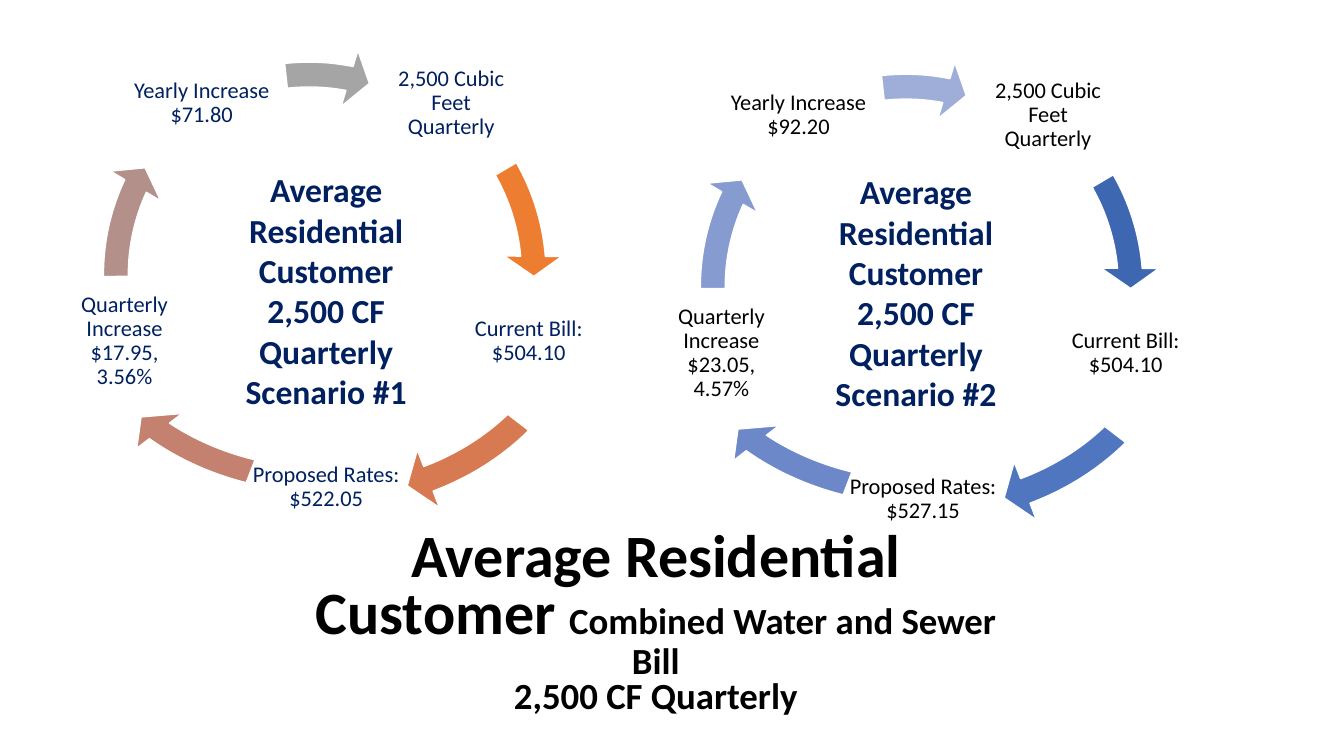
from dataclasses import dataclass

from pptx import Presentation
from pptx.dml.color import RGBColor
from pptx.enum import shapes, text
from pptx.util import Inches, Pt


@dataclass(frozen=True)
class Theme:
    font: str = "Calibri"
    navy: str = "002060"
    black: str = "000000"
    white: str = "FFFFFF"
    title: float = 42.9
    subtitle: float = 26.3
    heading: float = 24
    step: float = 16
    warm: tuple = ("ED7D31", "D87A51", "C48170", "B4908B", "A5A5A5")
    cool: tuple = ("3E67B2", "5176C0", "6C88C8", "869BD0", "9FAED8")


THEME = Theme()

STEP_BOXES = (
    (3.46, 0.18, 1.27),
    (4.23, 2.54, 1.27),
    (2.1, 3.99, 1.51),
    (0.22, 2.54, 1.27),
    (0.61, 0.18, 2.02),
)
STEP_HEIGHT = 1.27

ARROWS = (
    (0.52, 0.14, 4.68, 4.75, 212.933, 197.662),
    (0, 0, 5.71, 5.03, 38.04, 22.534),
    (0.03, 0.19, 5.65, 4.65, 82.107, 66.601),
    (0.48, 0.14, 4.75, 4.75, 122.979, 107.708),
    (0.31, 0.24, 4.75, 4.75, 168.657, 158.226),
)


def add_run(p, content, size, color, bold=False):
    r = p.add_run()
    r.text = content
    r.font.name = THEME.font
    r.font.size = Pt(size)
    r.font.bold = bold
    r.font.color.rgb = RGBColor.from_string(color)


def write(sp, paragraphs, *, size, color, bold=False, spacing=None, inset=None,
          anchor=text.MSO_ANCHOR.MIDDLE, fit=text.MSO_AUTO_SIZE.NONE):
    tf = sp.text_frame
    tf.word_wrap = True
    tf.auto_size = fit
    tf.vertical_anchor = anchor
    if inset is not None:
        tf.margin_left = tf.margin_right = Inches(inset)
        tf.margin_top = tf.margin_bottom = Inches(inset)
    for i, content in enumerate(paragraphs):
        p = tf.paragraphs[0] if i == 0 else tf.add_paragraph()
        p.alignment = text.PP_ALIGN.CENTER
        if spacing:
            p.line_spacing = spacing
        add_run(p, content, size, color, bold)
    return tf


def add_title(s, left, top, width, height):
    sp = s.shapes.title
    sp.left, sp.top = Inches(left), Inches(top)
    sp.width, sp.height = Inches(width), Inches(height)
    tf = write(sp, ["Average Residential Customer "], size=THEME.title,
               color=THEME.black, bold=True, spacing=0.8)
    p = tf.paragraphs[0]
    add_run(p, "Combined Water and Sewer Bill", THEME.subtitle, THEME.black, True)
    p.add_line_break()
    add_run(p, "2,500 CF Quarterly", THEME.subtitle, THEME.black, True)


def add_arrow(group, left, top, width, height, end, start, color):
    sp = group.shapes.add_shape(shapes.MSO_SHAPE.CIRCULAR_ARROW, Inches(left),
                                Inches(top), Inches(width), Inches(height))
    for i, value in enumerate((0.052, 3.359, end, start, 0.061)):
        sp.adjustments[i] = value
    sp.shadow.inherit = False
    sp.fill.solid()
    sp.fill.fore_color.rgb = RGBColor.from_string(color)
    sp.line.color.rgb = RGBColor.from_string(THEME.white)
    sp.line.width = Pt(1)


def add_cycle(s, left, top, steps, colors, text_color):
    group = s.shapes.add_group_shape()
    for step, (x, y, width), arrow, color in zip(steps, STEP_BOXES, ARROWS, colors):
        sp = group.shapes.add_textbox(Inches(left + x), Inches(top + y),
                                      Inches(width), Inches(STEP_HEIGHT))
        write(sp, [step], size=THEME.step, color=text_color, spacing=0.9, inset=0.02)
        dx, dy, *shape = arrow
        add_arrow(group, left + dx, top + dy, *shape, color)


def add_heading(s, left, top, scenario):
    sp = s.shapes.add_textbox(Inches(left), Inches(top), Inches(2.75), Inches(2.52))
    write(sp, ["Average Residential Customer", "2,500 CF Quarterly", scenario],
          size=THEME.heading, color=THEME.navy, bold=True,
          anchor=text.MSO_ANCHOR.TOP, fit=text.MSO_AUTO_SIZE.SHAPE_TO_FIT_TEXT)


def bill_steps(proposed, quarterly, yearly):
    return ("2,500 Cubic Feet Quarterly", "Current Bill: $504.10",
            f"Proposed Rates: {proposed}", f"Quarterly Increase {quarterly}",
            f"Yearly Increase {yearly}")


def main():
    prs = Presentation()
    prs.slide_width, prs.slide_height = Inches(13.33), Inches(7.5)
    s = prs.slides.add_slide(prs.slide_layouts[5])
    add_title(s, 2.85, 5.47, 7.31, 1.44)
    add_cycle(s, 0.38, 0.21, bill_steps("$522.05", "$17.95, 3.56%", "$71.80"),
              THEME.warm, THEME.navy)
    add_heading(s, 1.86, 1.63, "Scenario #1")
    add_cycle(s, 6.3, 0.33, bill_steps("$527.15", "$23.05, 4.57%", "$92.20"),
              THEME.cool, THEME.black)
    add_heading(s, 7.71, 1.65, "Scenario #2")
    prs.save("out.pptx")


if __name__ == "__main__":
    main()
